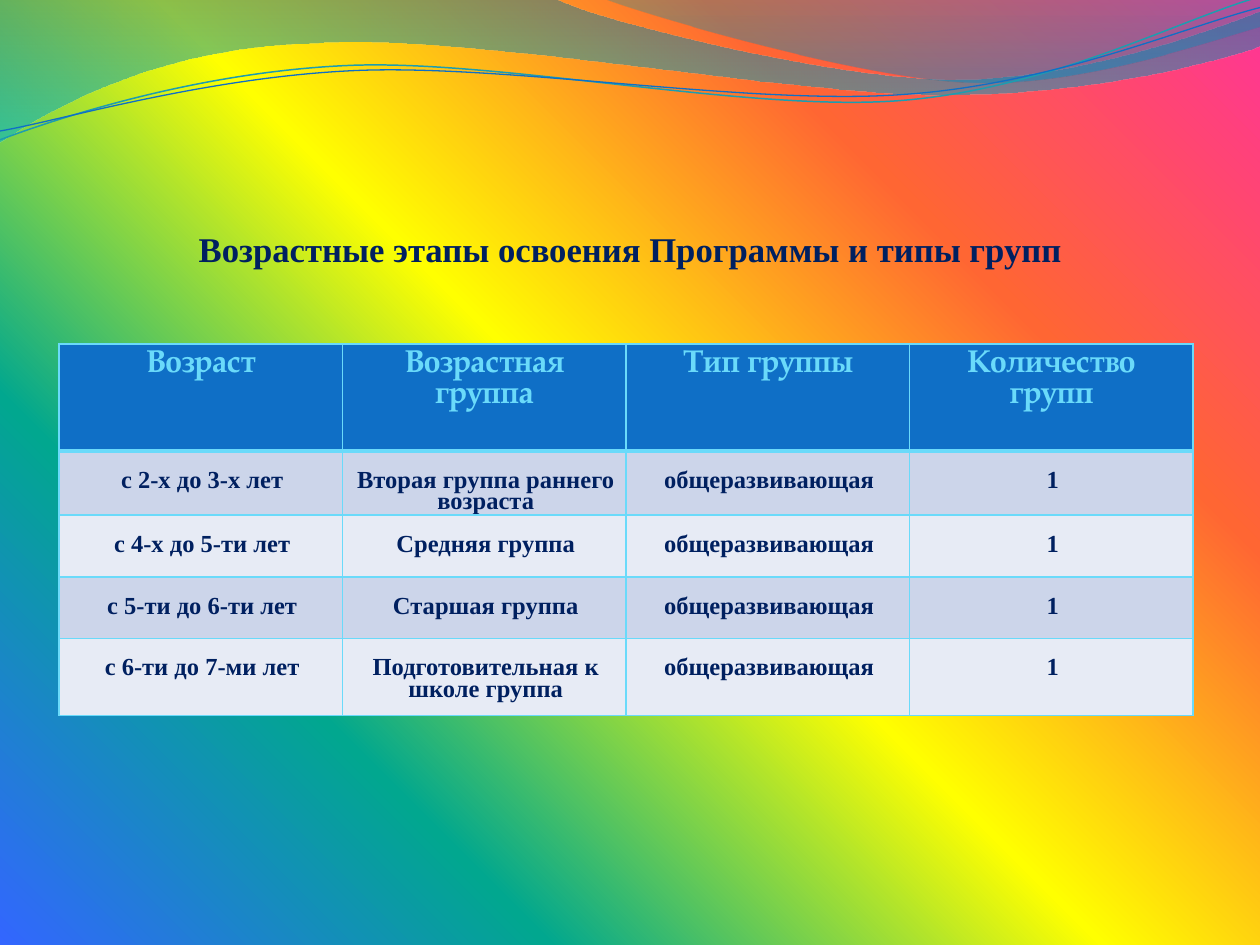
from lxml import etree
from pptx import Presentation, util as u
from pptx.dml.color import RGBColor
from pptx.enum import text
from pptx.oxml import parse_xml
from pptx.oxml.ns import nsdecls, qn

# Content
TITLE = "Возрастные этапы освоения Программы и типы групп"
HEADER = ["Возраст", "Возрастная группа", "Тип группы", "Количество групп"]
GROUPS = [
    ("с 2-х до 3-х лет", "Вторая группа раннего возраста"),
    ("с 4-х до 5-ти лет", "Средняя группа"),
    ("с 5-ти до 6-ти лет", "Старшая группа"),
    ("с 6-ти до 7-ми лет", "Подготовительная к школе группа"),
]
ROWS = [HEADER] + [[age, group, "общеразвивающая", "1"] for age, group in GROUPS]
ROW_HEIGHTS = [0.85, 0.49, 0.49, 0.49, 0.61]
COL_WIDTH = 2.25
NAVY, BLUE, SKY = "002060", "0F6FC6", "6ADAFA"
BANDS = ["CCD5EA", "E7EBF5"]

RAINBOW = [(0, "FF3399", 100), (25, "FF6633", 100), (50, "FFFF00", 100),
           (75, "01A78F", 100), (100, "3366FF", 100)]
CORNER = ('<a:path path="circle">'
          '<a:fillToRect l="100000" b="100000"/></a:path>')
DOWN = '<a:lin ang="5400000" scaled="0"/>'

# Waves: a path is a list of points (line) and six-number tuples (curve)
WAVE_BANDS = [
    ([(0, 0), (4.4, -0.01), (4.76, 0.17, 6.64, 0.63, 7.58, 0.63),
      (8.53, 0.63, 9.58, 0.26, 10, 0.09), (10.01, 0.36),
      (9.83, 0.44, 8.7, 0.76, 7.46, 0.75), (6.22, 0.75, 3.82, 0.28, 2.57, 0.34),
      (1.29, 0.36, 0.46, 0.83, -0.01, 1.13), (0, 0)],
     [(0, "0074A1", 45), (100, "00B8D3", 55)]),
    ([(4.79, -0.01), (5.09, 0.11, 6.82, 0.62, 7.69, 0.65),
      (8.56, 0.69, 9.61, 0.32, 10, 0.21), (10, 0), (4.79, -0.01)],
     [(0, "0691A6", 30), (80, "008BBF", 45)]),
]
WAVE_LINES = [
    ([(0, 1.11), (0.48, 0.93, 1.58, 0.57, 2.77, 0.52),
      (3.95, 0.47, 5.93, 0.89, 7.13, 0.8), (8.33, 0.71, 9.38, 0.15, 9.98, -0.02)],
     "1D9DB0", 0.85),
    ([(0, 1.04), (0.47, 0.96, 1.64, 0.61, 2.83, 0.56),
      (4.03, 0.51, 5.97, 0.84, 7.17, 0.75), (8.36, 0.67, 9.41, 0.21, 10, 0.06)],
     BLUE, 0.75),
]


def rgb(value):
    return RGBColor.from_string(value)


def set_gradient(fill, parent, stops, direction):
    gs = "".join(f'<a:gs pos="{pos * 1000}"><a:srgbClr val="{c}">'
                 f'<a:alpha val="{alpha * 1000}"/></a:srgbClr></a:gs>'
                 for pos, c, alpha in stops)
    fill.solid()
    parent.replace(parent.find(qn("a:solidFill")), parse_xml(
        f'<a:gradFill {nsdecls("a")} rotWithShape="1">'
        f'<a:gsLst>{gs}</a:gsLst>{direction}</a:gradFill>'))


def add_wave(s, path, close):
    """Lay the points as lines, then join each three of a curve into a Bezier."""
    pts = [(round(seg[i] * 1000), round(seg[i + 1] * 1000))
           for seg in path for i in range(0, len(seg), 2)]
    fb = s.shapes.build_freeform(*pts[0], scale=u.Inches(1) / 1000)
    fb.add_line_segments(pts[1:], close=close)
    sp = fb.convert_to_shape()
    sp.shadow.inherit = False
    lines = iter(list(sp._element.iter(qn("a:lnTo"))))
    for seg in path[1:]:
        first = next(lines)
        if len(seg) == 6:
            curve = etree.Element(qn("a:cubicBezTo"))
            first.addprevious(curve)
            for ln in (first, next(lines), next(lines)):
                curve.append(ln[0])
                ln.getparent().remove(ln)
    return sp


def format_text(p, font, size, color):
    p.alignment = text.PP_ALIGN.CENTER
    for r in p.runs:
        r.font.name, r.font.size, r.font.bold = font, u.Pt(size), True
        r.font.color.rgb = rgb(color)


def set_borders(cell, widths):
    tc_pr = cell._tc.get_or_add_tcPr()
    for side, width in widths.items():
        ln = etree.SubElement(tc_pr, qn(f"a:ln{side}"), w=str(u.Pt(width)))
        fill = etree.SubElement(ln, qn("a:solidFill"))
        etree.SubElement(fill, qn("a:srgbClr"), val=SKY)


prs = Presentation()
prs.slide_width, prs.slide_height = u.Inches(10), u.Inches(7.5)
s = prs.slides.add_slide(prs.slide_layouts[5])

# Background
set_gradient(s.background.fill, s._element.cSld.bg.bgPr, RAINBOW, CORNER)

# Waves along the top
for path, stops in WAVE_BANDS:
    sp = add_wave(s, path, True)
    set_gradient(sp.fill, sp._element.spPr, stops, DOWN)
    sp.line.fill.background()
for path, color, width in WAVE_LINES:
    sp = add_wave(s, path, False)
    sp.fill.background()
    sp.line.color.rgb, sp.line.width = rgb(color), u.Pt(width)

# Title, raised by its bottom margin
title = s.shapes.title
title.left, title.top, title.width, title.height = map(u.Inches, (0.5, 2.03, 9, 0.86))
tf = title.text_frame
tf.text = TITLE
tf.word_wrap, tf.auto_size = True, text.MSO_AUTO_SIZE.NONE
tf.vertical_anchor = text.MSO_ANCHOR.BOTTOM
tf.margin_left = tf.margin_right = tf.margin_top = 0
tf.margin_bottom = u.Inches(0.75)
format_text(tf.paragraphs[0], "Times New Roman", 19.8, NAVY)

# Table
frame = s.shapes.add_table(len(ROWS), len(HEADER), u.Inches(0.47), u.Inches(2.73),
                           u.Inches(COL_WIDTH * len(HEADER)), u.Inches(sum(ROW_HEIGHTS)))
table = frame.table
for col in table.columns:
    col.width = u.Inches(COL_WIDTH)
for i, (row, height) in enumerate(zip(ROWS, ROW_HEIGHTS)):
    table.rows[i].height = u.Inches(height)
    for j, value in enumerate(row):
        cell = table.cell(i, j)
        cell.text = value
        p = cell.text_frame.paragraphs[0]
        set_borders(cell, {"L": 1, "R": 1, "T": 3 if i == 1 else 1, "B": 3 if i == 0 else 1})
        cell.fill.solid()
        if i == 0:
            cell.fill.fore_color.rgb = rgb(BLUE)
            format_text(p, "TeX Gyre Pagella", 18, SKY)
        else:
            cell.fill.fore_color.rgb = rgb(BANDS[(i - 1) % 2])
            cell.margin_left, cell.margin_right = u.Inches(0.09), u.Inches(0.07)
            cell.margin_top, cell.margin_bottom = u.Pt(12.2), 0
            p.line_spacing = u.Pt(12.2)
            format_text(p, "Times New Roman", 14, NAVY)

prs.save("out.pptx")
